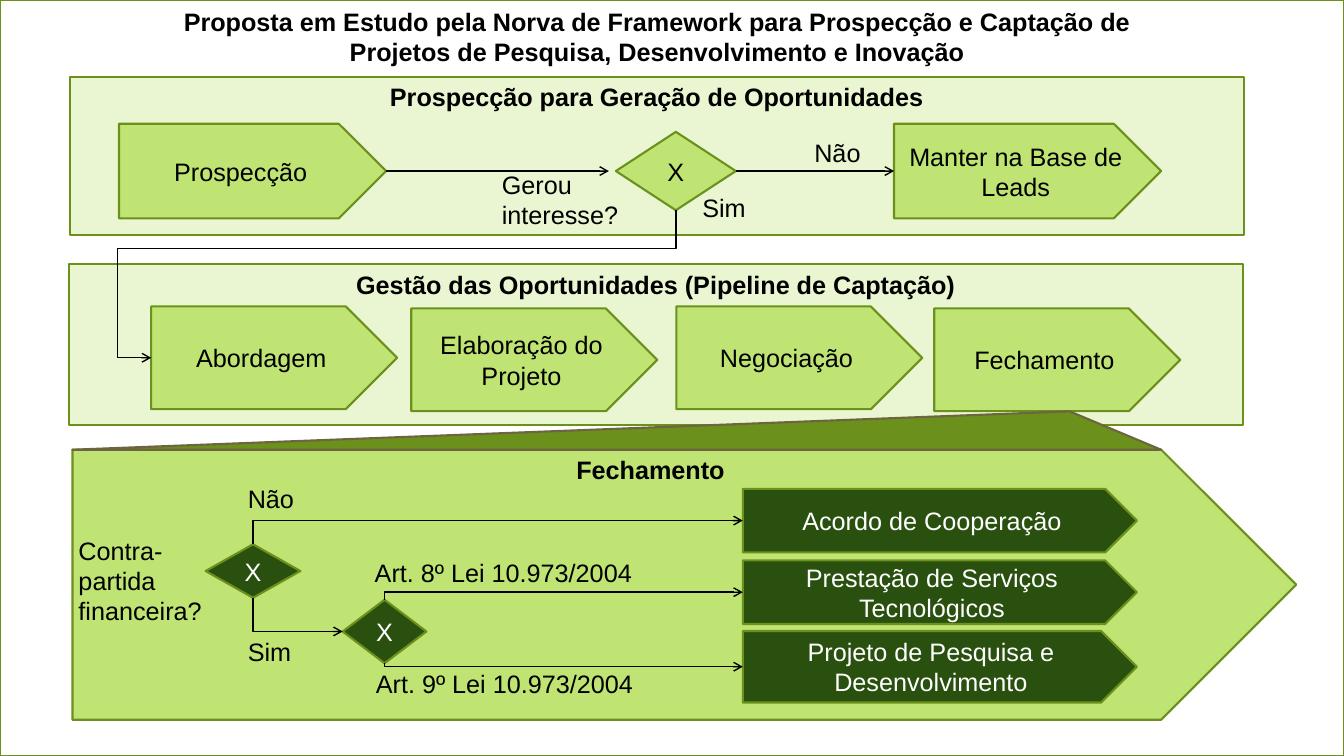
from lxml import etree
from pptx import Presentation
from pptx.dml.color import RGBColor
from pptx.enum import shapes, text
from pptx.oxml import ns
from pptx.util import Pt

BLACK = RGBColor(0x00, 0x00, 0x00)
WHITE = RGBColor(0xFF, 0xFF, 0xFF)
PALE = RGBColor(0xEA, 0xF6, 0xD1)
LIME = RGBColor(0xC0, 0xE4, 0x74)
FOREST = RGBColor(0x2A, 0x50, 0x10)
OLIVE = RGBColor(0x6B, 0x90, 0x1C)
BROWN = RGBColor(0x6D, 0x65, 0x40)

RECTANGLE = shapes.MSO_SHAPE.RECTANGLE
PLATE = shapes.MSO_SHAPE.PENTAGON
DECISION = shapes.MSO_SHAPE.FLOWCHART_DECISION
TRIANGLE = shapes.MSO_SHAPE.ISOSCELES_TRIANGLE
TOP, LEFT, BOTTOM, RIGHT = range(4)

TITLE = ("Proposta em Estudo pela Norva de Framework para Prospecção e Captação de\n"
         "Projetos de Pesquisa, Desenvolvimento e Inovação")
TITLE_BOX = (120.2, 0.7, 698.4, 51.1)
FRAME_BOX = (0, 0, 960, 540)

PANELS = [
    (RECTANGLE, "Prospecção para Geração de Oportunidades", (49.7, 54.7, 838.8, 113), PALE),
    (RECTANGLE, "Gestão das Oportunidades (Pipeline de Captação)", (49, 188.6, 838.8, 115.2), PALE),
    (PLATE, "Fechamento", (51.8, 321.1, 874.1, 193), LIME),
]
ZOOM_BOX = (51.8, 293.8, 777.6, 27.4)

NODES = {
    "prospect": (PLATE, "Prospecção", (85, 88.4, 190.8, 67.6), LIME),
    "interest": (DECISION, "X", (439.9, 94.2, 85.7, 56), LIME),
    "leads": (PLATE, "Manter na Base de Leads", (638.6, 88.4, 190.8, 67.6), LIME),
    "approach": (PLATE, "Abordagem", (108, 218.9, 175.7, 73.4), LIME),
    "drafting": (PLATE, "Elaboração do Projeto", (293.8, 220.3, 175.7, 73.4), LIME),
    "negotiation": (PLATE, "Negociação", (483.1, 218.9, 175.7, 73.4), LIME),
    "closing": (PLATE, "Fechamento", (667.4, 220.3, 175.7, 73.4), LIME),
    "funding": (DECISION, "X", (146.9, 388.8, 67.7, 38.2), FOREST),
    "article": (DECISION, "X", (244.8, 428.4, 59.8, 45.4), FOREST),
    "cooperation": (PLATE, "Acordo de Cooperação", (530.6, 349.2, 281.5, 45.4), FOREST),
    "services": (PLATE, "Prestação de Serviços Tecnológicos", (530.6, 400.3, 281.5, 45.4), FOREST),
    "research": (PLATE, "Projeto de Pesquisa e Desenvolvimento", (530.6, 450.7, 281.5, 51.1), FOREST),
}

ELBOWS = [
    ("interest", BOTTOM, "approach", "bentConnector4", {"adj1": 26100, "adj2": 106400}),
    ("funding", TOP, "cooperation", "bentConnector2", {}),
    ("funding", BOTTOM, "article", "bentConnector2", {}),
    ("article", TOP, "services", "bentConnector2", {}),
    ("article", BOTTOM, "research", "bentConnector2", {}),
]
INTEREST_ARROW_END = 434.9

LABELS = [
    ("Sim", (494.6, 133.9, 46.1, 28.8)),
    ("Não", (574.6, 94.3, 47.5, 28.8)),
    ("Gerou\ninteresse?", (351.4, 117.4, 98.6, 51.1)),
    ("Não", (169.9, 342, 47.5, 28.8)),
    ("Sim", (169.9, 450.7, 46.1, 28.8)),
    ("Art. 8º Lei 10.973/2004", (260.6, 394.6, 200.2, 28.8)),
    ("Art. 9º Lei 10.973/2004", (261.4, 473.8, 200.2, 28.8)),
    ("Contra-\npartida\nfinanceira?", (49, 378.7, 103.7, 72.7)),
]


def write(shape, words, color=BLACK, bold=False, align=text.PP_ALIGN.CENTER,
          anchor=text.MSO_ANCHOR.TOP, wrap=True):
    frame = shape.text_frame
    frame.text = words
    frame.word_wrap = wrap
    frame.auto_size = text.MSO_AUTO_SIZE.NONE
    frame.vertical_anchor = anchor
    frame.margin_left = frame.margin_right = Pt(7.2)
    frame.margin_top = frame.margin_bottom = Pt(3.6)
    for paragraph in frame.paragraphs:
        paragraph.alignment = align
        for run in paragraph.runs:
            run.font.name = "Arial"
            run.font.size = Pt(18)
            run.font.bold = bold
            run.font.color.rgb = color


def add_box(slide, kind, box, fill, line=OLIVE):
    shape = slide.shapes.add_shape(kind, *map(Pt, box))
    shape.shadow.inherit = False
    shape.fill.solid()
    shape.fill.fore_color.rgb = fill
    shape.line.color.rgb = line
    shape.line.width = Pt(1.5)
    return shape


def add_node(slide, kind, words, box, fill):
    shape = add_box(slide, kind, box, fill)
    write(shape, words, WHITE if fill == FOREST else BLACK, anchor=text.MSO_ANCHOR.MIDDLE)
    if kind == DECISION:
        frame = shape.text_frame
        frame.margin_left = frame.margin_right = frame.margin_top = frame.margin_bottom = 0
    return shape


def add_arrow(slide, kind, start, site, end_x=0, end_y=0):
    connector = slide.shapes.add_connector(kind, 0, 0, end_x, end_y)
    connector.begin_connect(start, site)
    connector.line.color.rgb = BLACK
    connector.line.width = Pt(1)
    line = connector.line._get_or_add_ln()
    etree.SubElement(line, ns.qn("a:tailEnd"), type="arrow")
    etree.SubElement(connector.element.spPr, ns.qn("a:effectLst"))
    return connector


def add_elbow(slide, start, site, end, preset, adjustments):
    connector = add_arrow(slide, shapes.MSO_CONNECTOR.ELBOW, start, site)
    connector.end_connect(end, LEFT)
    begin_x, begin_y = connector.begin_x, connector.begin_y
    across, down = connector.end_x - begin_x, connector.end_y - begin_y
    connector.width, connector.height = abs(down), abs(across)
    connector.left = begin_x + (across - abs(down)) // 2
    connector.top = begin_y + (down - abs(across)) // 2
    transform = connector.element.spPr.find(ns.qn("a:xfrm"))
    transform.set("rot", str(90 * 60000))
    transform.set("flipH", "1" if down < 0 else "0")
    transform.set("flipV", "1" if across > 0 else "0")
    geometry = connector.element.spPr.find(ns.qn("a:prstGeom"))
    geometry.set("prst", preset)
    guides = geometry.find(ns.qn("a:avLst"))
    for name, value in adjustments.items():
        etree.SubElement(guides, ns.qn("a:gd"), name=name, fmla=f"val {value}")


def main():
    presentation = Presentation()
    presentation.slide_width, presentation.slide_height = Pt(960), Pt(540)
    slide = presentation.slides.add_slide(presentation.slide_layouts[5])

    title = slide.shapes.title
    title.left, title.top, title.width, title.height = map(Pt, TITLE_BOX)
    write(title, TITLE, bold=True, wrap=False)
    page_frame = add_box(slide, RECTANGLE, FRAME_BOX, WHITE)
    title.element.addprevious(page_frame.element)

    for kind, words, box, fill in PANELS:
        write(add_box(slide, kind, box, fill), words, bold=True)
    nodes = {key: add_node(slide, *node) for key, node in NODES.items()}
    zoom = add_box(slide, TRIANGLE, ZOOM_BOX, OLIVE, BROWN)
    zoom.adjustments[0] = 0.916

    straight = shapes.MSO_CONNECTOR.STRAIGHT
    prospect = nodes["prospect"]
    add_arrow(slide, straight, prospect, RIGHT,
              Pt(INTEREST_ARROW_END), prospect.top + prospect.height // 2)
    add_arrow(slide, straight, nodes["interest"], RIGHT).end_connect(nodes["leads"], LEFT)
    for start, site, end, preset, adjustments in ELBOWS:
        add_elbow(slide, nodes[start], site, nodes[end], preset, adjustments)

    for words, box in LABELS:
        label = slide.shapes.add_textbox(*map(Pt, box))
        write(label, words, align=text.PP_ALIGN.LEFT, wrap=False)

    presentation.save("out.pptx")


if __name__ == "__main__":
    main()
